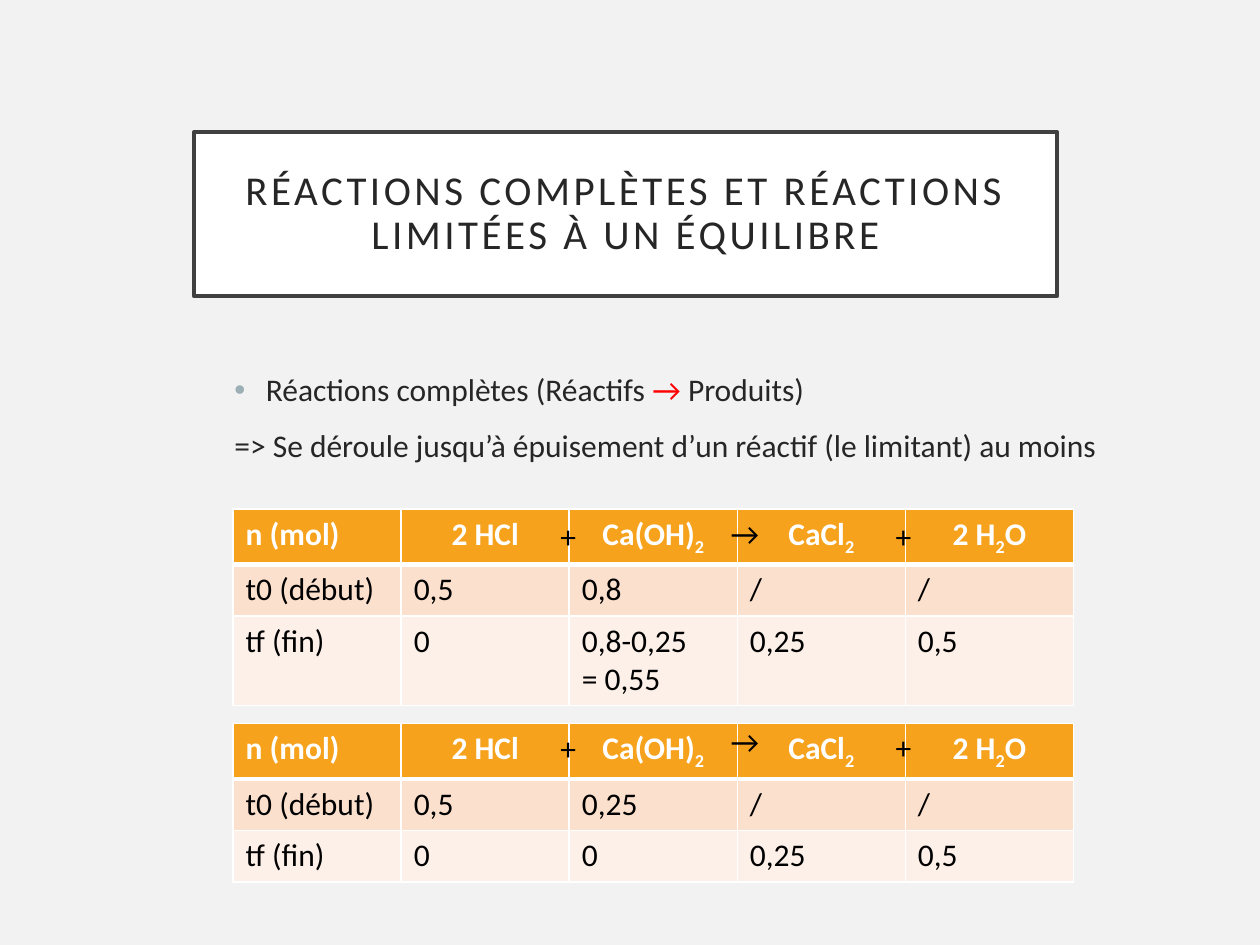
from dataclasses import dataclass

from lxml import etree
from pptx import Presentation
from pptx.dml.color import RGBColor
from pptx.enum.text import MSO_ANCHOR, MSO_AUTO_SIZE, PP_ALIGN
from pptx.oxml.ns import qn
from pptx.util import Inches, Pt

CENTER, LEFT = PP_ALIGN.CENTER, PP_ALIGN.LEFT
TOP, MIDDLE = MSO_ANCHOR.TOP, MSO_ANCHOR.MIDDLE
NO_FIT, GROW = MSO_AUTO_SIZE.NONE, MSO_AUTO_SIZE.SHAPE_TO_FIT_TEXT


@dataclass(frozen=True)
class Theme:
    font: str = "Calibri"
    title_size: float = 23.4
    body_size: float = 18
    background: str = "F2F2F2"
    white: str = "FFFFFF"
    black: str = "000000"
    text: str = "262626"
    frame: str = "404040"
    bullet: str = "9BAFB5"
    accent: str = "FF0000"
    header: str = "F6A21D"
    bands: tuple = ("FBE0CD", "FDF0E8")


THEME = Theme()
TABLE_LEFT, TABLE_WIDTH, ROW_HEIGHT = 1.85, 6.67, 0.41
HEADER = ["n (mol)", "2 HCl", "Ca(OH)_2", "CaCl_2", "2 H_2_O"]
COMPLETE_LIMITING = [
    ["t0 (début)", "0,5", "0,8", "/", "/"],
    ["tf (fin)", "0", "0,8-0,25\n= 0,55", "0,25", "0,5"],
]
COMPLETE_EXACT = [
    ["t0 (début)", "0,5", "0,25", "/", "/"],
    ["tf (fin)", "0", "0", "0,25", "0,5"],
]


def rgb(value):
    return RGBColor.from_string(value)


def add_text(p, text, size=THEME.body_size, color=THEME.black, bold=False,
             spacing=0, subscript=False):
    r = p.add_run()
    r.text = text
    r.font.name = THEME.font
    r.font.size = Pt(size)
    r.font.bold = bold
    r.font.color.rgb = rgb(color)
    rPr = r._r.get_or_add_rPr()
    if spacing:
        rPr.set("spc", str(spacing * 100))
    if subscript:
        rPr.set("baseline", "-25000")


def place(sp, left, top, width, height):
    sp.left, sp.top = Inches(left), Inches(top)
    sp.width, sp.height = Inches(width), Inches(height)


def add_color(parent, value):
    etree.SubElement(parent, qn("a:srgbClr")).set("val", value)


def set_bullet(p, char, color):
    pPr = p._p.get_or_add_pPr()
    pPr.set("marL", str(Inches(0.25)))
    pPr.set("indent", str(-Inches(0.25)))
    add_color(etree.SubElement(pPr, qn("a:buClr")), color)
    etree.SubElement(pPr, qn("a:buChar")).set("char", char)


def remove_bullet(p):
    pPr = p._p.get_or_add_pPr()
    pPr.set("marL", "0")
    pPr.set("indent", "0")
    etree.SubElement(pPr, qn("a:buNone"))


def set_borders(cell, color, top=1, bottom=1):
    tcPr = cell._tc.get_or_add_tcPr()
    for side, width in (("L", 1), ("R", 1), ("T", top), ("B", bottom)):
        ln = etree.SubElement(tcPr, qn(f"a:ln{side}"))
        ln.set("w", str(Pt(width)))
        add_color(etree.SubElement(ln, qn("a:solidFill")), color)


def fill_title(sp, text):
    place(sp, 1.54, 1.05, 6.85, 1.3)
    sp.fill.solid()
    sp.fill.fore_color.rgb = rgb(THEME.white)
    sp.line.color.rgb = rgb(THEME.frame)
    sp.line.width = Pt(2.5)
    tf = sp.text_frame
    tf.auto_size = NO_FIT
    tf.vertical_anchor = MIDDLE
    tf.margin_left = tf.margin_right = Inches(0.2)
    tf.margin_top = tf.margin_bottom = Inches(0.2)
    p = tf.paragraphs[0]
    p.alignment = CENTER
    p.line_spacing = 0.9
    add_text(p, text, size=THEME.title_size, color=THEME.text, spacing=2)


def fill_body(sp):
    place(sp, 1.76, 2.89, 7.18, 3.39)
    tf = sp.text_frame
    tf.auto_size = NO_FIT
    tf.vertical_anchor = TOP
    first, second = tf.paragraphs[0], tf.add_paragraph()
    for p in (first, second):
        p.space_before = Pt(10)
    set_bullet(first, "•", THEME.bullet)
    add_text(first, "Réactions complètes (Réactifs ", color=THEME.text)
    add_text(first, "→", color=THEME.accent)
    add_text(first, " Produits)", color=THEME.text)
    remove_bullet(second)
    add_text(second, "=> Se déroule jusqu’à épuisement d’un réactif "
             "(le limitant) au moins", color=THEME.text)


def fill_cell(cell, text, fill, align=LEFT, top=1, bottom=1, **fmt):
    set_borders(cell, THEME.white, top, bottom)
    cell.fill.solid()
    cell.fill.fore_color.rgb = rgb(fill)
    tf = cell.text_frame
    for i, line in enumerate(text.split("\n")):
        p = tf.add_paragraph() if i else tf.paragraphs[0]
        p.alignment = align
        for j, part in enumerate(line.split("_")):
            add_text(p, part, subscript=j % 2 == 1, **fmt)


def add_amounts(s, top, rows):
    n_rows, n_cols = len(rows) + 1, len(HEADER)
    table = s.shapes.add_table(
        n_rows, n_cols, Inches(TABLE_LEFT), Inches(top),
        Inches(TABLE_WIDTH), Inches(ROW_HEIGHT * n_rows)).table
    for c, text in enumerate(HEADER):
        fill_cell(table.cell(0, c), text, THEME.header, CENTER if c else LEFT,
                  bottom=3, color=THEME.white, bold=True)
    for r, row in enumerate(rows):
        for c, text in enumerate(row):
            fill_cell(table.cell(r + 1, c), text, THEME.bands[r],
                      top=1 if r else 3)


def add_sign(s, text, left, top):
    sp = s.shapes.add_textbox(Inches(left), Inches(top), Inches(0.24), Inches(0.42))
    tf = sp.text_frame
    tf.word_wrap = True
    tf.auto_size = GROW
    add_text(tf.paragraphs[0], text)


def add_reaction(s, top, rows, plus_tops, arrow_top):
    add_amounts(s, top, rows)
    for left, plus_top in zip((4.35, 7.01), plus_tops):
        add_sign(s, "+", left, plus_top)
    add_sign(s, "→", 5.7, arrow_top)


def main():
    prs = Presentation()
    prs.slide_width, prs.slide_height = Inches(10), Inches(7.5)
    s = prs.slides.add_slide(prs.slide_layouts[1])
    s.background.fill.solid()
    s.background.fill.fore_color.rgb = rgb(THEME.background)
    fill_title(s.shapes.title,
               "RÉACTIONS COMPLÈTES ET RÉACTIONS LIMITÉES À UN ÉQUILIBRE")
    fill_body(s.placeholders[1])
    add_reaction(s, 4.04, COMPLETE_LIMITING, (4.05, 4.05), 4.03)
    add_reaction(s, 5.74, COMPLETE_EXACT, (5.74, 5.73), 5.68)
    prs.save("out.pptx")


if __name__ == "__main__":
    main()
